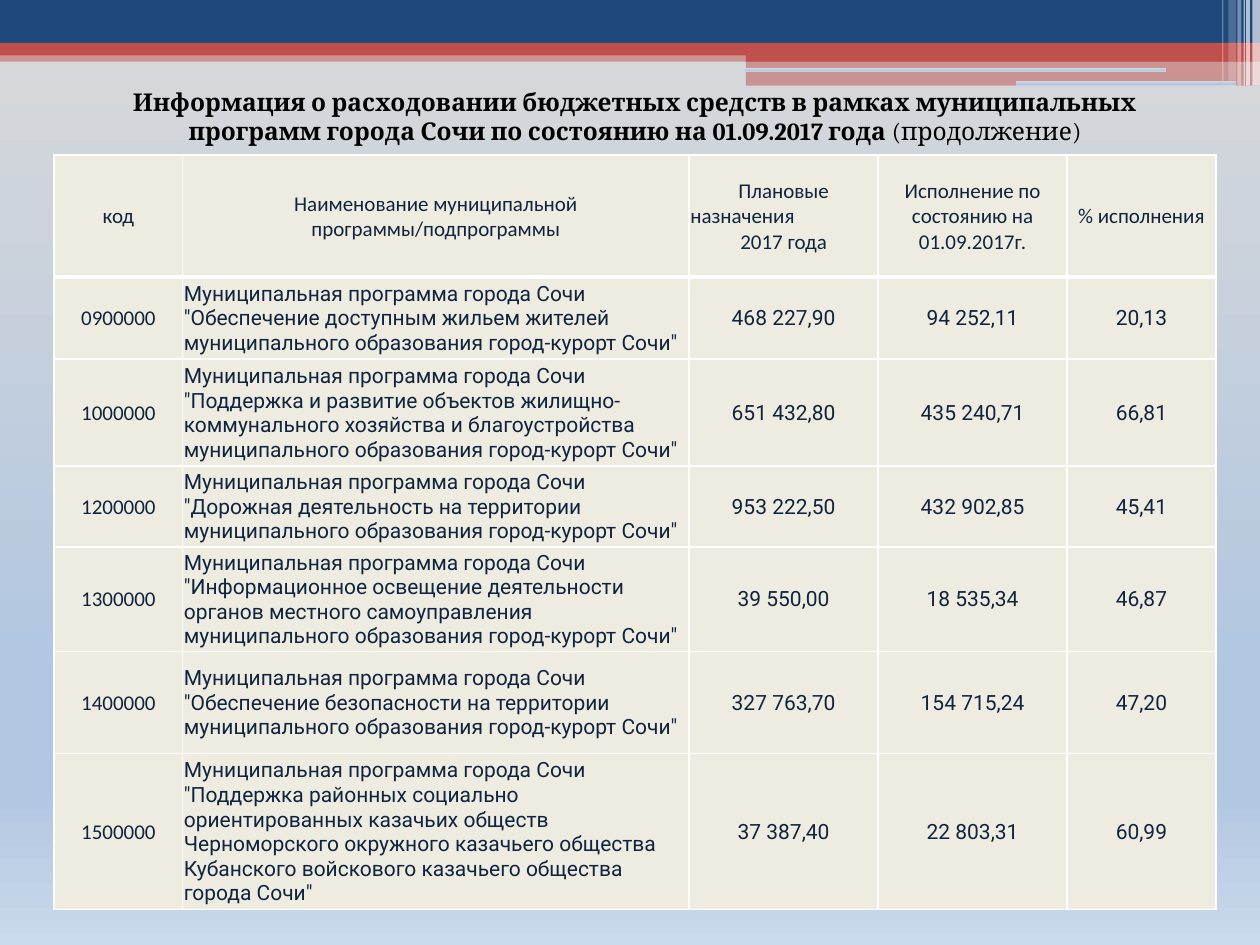
from lxml.etree import SubElement
from pptx import Presentation
from pptx.dml.color import RGBColor
from pptx.enum.shapes import MSO_SHAPE
from pptx.enum.text import MSO_ANCHOR, PP_ALIGN
from pptx.oxml.ns import qn
from pptx.util import Inches, Pt

COLORS = {"blue": "1F497D", "red": "C0504D", "white": "FFFFFF", "black": "000000",
          "cell": "EEECE1", "ink": "0F243E"}
BACKDROP = [(0, "D9D9D9"), (74, "B0C6E1"), (83, "B0C6E1"), (100, "CAD9EB")]
BANDS = [
    (0, 0.4, 10, 0.09, "red", 50),
    (0, 0, 10, 0.34, "blue", 100),
    (0, 0.34, 10, 0.1, "red", 100),
    (5.92, 0.39, 4.08, 0.1, "red", 100),
    (5.92, 0.48, 4.08, 0.2, "red", 50),
]
SLOTS = [(5.91, 0.54, 3.35, 0.03), (8.06, 0.64, 1.75, 0.04)]
STRIPES = [
    (9.94, 0, 0.06, 0.68, "white", 65),
    (9.89, 0, 0.03, 0.68, "white", 65),
    (9.87, 0, 0.01, 0.68, "white", 60),
    (9.82, 0, 0.03, 0.68, "white", 40),
    (9.75, 0, 0.06, 0.64, "white", 20),
    (9.7, 0, 0.01, 0.64, "white", 30),
]
COLUMN_WIDTHS = [1.02, 4.02, 1.5, 1.5, 1.18]
ROW_HEIGHTS = [0.97, 0.65, 0.85, 0.64, 0.83, 0.81, 1.24]
HEADERS = [
    "код",
    "Наименование муниципальной программы/подпрограммы",
    "Плановые\nназначения\n2017 года",
    "Исполнение по состоянию на 01.09.2017г.",
    "% исполнения",
]
PROGRAM_PREFIX = "Муниципальная программа города Сочи "
PROGRAMS = [
    ("0900000", '"Обеспечение доступным жильем жителей муниципального образования '
     'город-курорт Сочи"', "468 227,90", "94 252,11", "20,13"),
    ("1000000", '"Поддержка и развитие объектов жилищно-коммунального хозяйства и '
     'благоустройства муниципального образования город-курорт Сочи"',
     "651 432,80", "435 240,71", "66,81"),
    ("1200000", '"Дорожная деятельность на территории муниципального образования '
     'город-курорт Сочи"', "953 222,50", "432 902,85", "45,41"),
    ("1300000", '"Информационное освещение деятельности органов местного '
     'самоуправления муниципального образования город-курорт Сочи"',
     "39 550,00", "18 535,34", "46,87"),
    ("1400000", '"Обеспечение безопасности на территории муниципального образования '
     'город-курорт Сочи"', "327 763,70", "154 715,24", "47,20"),
    ("1500000", '"Поддержка районных социально ориентированных казачьих обществ '
     'Черноморского окружного казачьего общества Кубанского войскового казачьего '
     'общества города Сочи"', "37 387,40", "22 803,31", "60,99"),
]


def color(name):
    """Return the named palette colour."""
    return RGBColor.from_string(COLORS[name])


def fill_gradient(fill, element):
    """Give a fill the vertical backdrop gradient."""
    fill.gradient()
    fill.gradient_angle = 270
    stops = element.xpath(".//a:gsLst")[0]
    for stop in list(stops):
        stops.remove(stop)
    for position, value in BACKDROP:
        stop = SubElement(stops, qn("a:gs"), pos=str(position * 1000))
        SubElement(stop, qn("a:srgbClr"), val=value)


def add_block(page, kind, box):
    """Add a shape without line or shadow to the given box."""
    shape = page.shapes.add_shape(kind, *map(Inches, box))
    shape.shadow.inherit = False
    shape.line.fill.background()
    return shape


def add_bars(page, bars):
    """Draw solid bars with the listed opacity."""
    for *box, name, opacity in bars:
        bar = add_block(page, MSO_SHAPE.RECTANGLE, box)
        bar.fill.solid()
        bar.fill.fore_color.rgb = color(name)
        if opacity < 100:
            tint = bar.element.xpath("./p:spPr/a:solidFill/a:srgbClr")[0]
            SubElement(tint, qn("a:alpha"), val=str(opacity * 1000))


def add_banner(page):
    """Draw the decorated strip along the top edge."""
    add_bars(page, BANDS)
    for box in SLOTS:
        slot = add_block(page, MSO_SHAPE.ROUNDED_RECTANGLE, box)
        fill_gradient(slot.fill, slot.element)
    add_bars(page, STRIPES)


def add_title(page, box):
    """Write the centred title."""
    frame = page.shapes.add_textbox(*map(Inches, box)).text_frame
    frame.word_wrap = True
    para = frame.paragraphs[0]
    para.alignment = PP_ALIGN.CENTER
    para.font.size, para.font.name = Pt(14), "Cambria"
    para.font.color.rgb = color("black")
    heading = para.add_run()
    heading.text = ("Информация о расходовании бюджетных средств в рамках муниципальных "
                    "программ города Сочи по состоянию на 01.09.2017 года ")
    heading.font.bold = True
    para.add_run().text = "(продолжение)"


def add_borders(cell, top, bottom):
    """Draw white borders with the given top and bottom widths in points."""
    properties = cell._tc.get_or_add_tcPr()
    for side, width in (("L", 1), ("R", 1), ("T", top), ("B", bottom)):
        line = SubElement(properties, qn(f"a:ln{side}"), w=str(Pt(width)))
        paint = SubElement(line, qn("a:solidFill"))
        SubElement(paint, qn("a:srgbClr"), val=COLORS["white"])


def fill_cell(cell, text, font_name, alignment):
    """Set the text and look of one table cell."""
    cell.text = text
    cell.vertical_anchor = MSO_ANCHOR.MIDDLE
    cell.margin_left = cell.margin_right = cell.margin_top = Inches(0.01)
    cell.margin_bottom = 0
    cell.fill.solid()
    cell.fill.fore_color.rgb = color("cell")
    for para in cell.text_frame.paragraphs:
        para.alignment = alignment
        para.font.size, para.font.name = Pt(12), font_name
        para.font.color.rgb = color("ink")


def add_program_table(page, box):
    """Build the table of programme spending."""
    rows = [HEADERS] + [(code, PROGRAM_PREFIX + name, *values)
                        for code, name, *values in PROGRAMS]
    table = page.shapes.add_table(len(rows), len(HEADERS), *map(Inches, box)).table
    table.first_row = table.horz_banding = False
    for column, width in zip(table.columns, COLUMN_WIDTHS):
        column.width = Inches(width)
    for row, height in zip(table.rows, ROW_HEIGHTS):
        row.height = Inches(height)
    for i, texts in enumerate(rows):
        for j, text in enumerate(texts):
            cell = table.cell(i, j)
            add_borders(cell, 3 if i == 1 else 1, 3 if i == 0 else 1)
            font_name = "Calibri" if i == 0 or j == 0 else "Roboto"
            alignment = PP_ALIGN.LEFT if i and j == 1 else PP_ALIGN.CENTER
            fill_cell(cell, text, font_name, alignment)
    table.cell(0, 2).text_frame.paragraphs[1].alignment = PP_ALIGN.LEFT


def main():
    """Build and save the deck."""
    deck = Presentation()
    deck.slide_width, deck.slide_height = Inches(10), Inches(7.5)
    page = deck.slides.add_slide(deck.slide_layouts[6])
    fill_gradient(page.background.fill, page.element)
    add_banner(page)
    add_program_table(page, (0.43, 1.23, 9.21, 5.98))
    add_title(page, (0.59, 0.64, 8.9, 0.57))
    deck.save("out.pptx")


if __name__ == "__main__":
    main()
